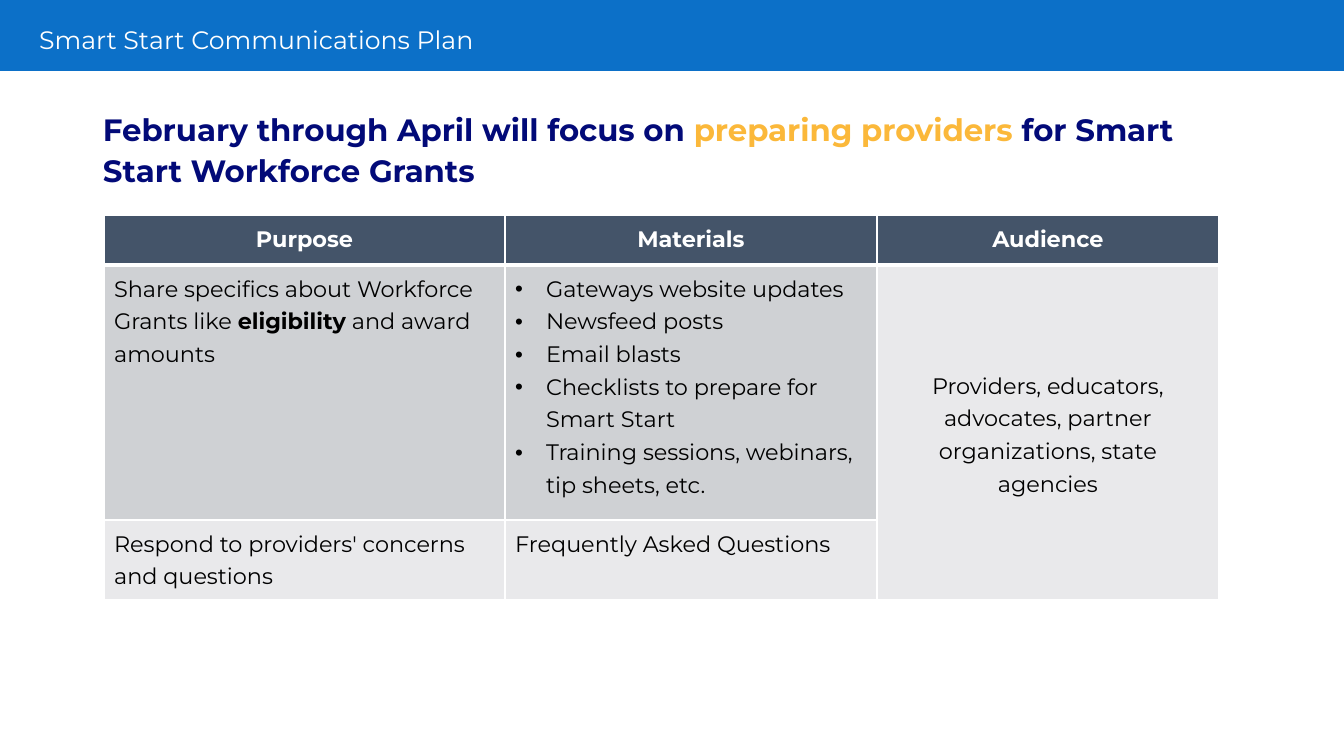
from lxml import etree
from pptx import Presentation
from pptx.dml.color import RGBColor
from pptx.enum.shapes import MSO_SHAPE
from pptx.enum.text import MSO_ANCHOR, MSO_AUTO_SIZE, PP_ALIGN
from pptx.oxml.ns import qn
from pptx.util import Emu, Pt

LEFT, CENTER = PP_ALIGN.LEFT, PP_ALIGN.CENTER
TOP, MIDDLE = MSO_ANCHOR.TOP, MSO_ANCHOR.MIDDLE
BLUE = RGBColor(0x0C, 0x70, 0xC8)
NAVY = RGBColor(0x02, 0x0A, 0x78)
GOLD = RGBColor(0xFB, 0xB8, 0x3A)
SLATE = RGBColor(0x44, 0x54, 0x69)
GREY = RGBColor(0xCF, 0xD1, 0xD4)
PALE = RGBColor(0xE9, 0xE9, 0xEB)
WHITE = RGBColor(0xFF, 0xFF, 0xFF)
BLACK = RGBColor(0, 0, 0)
PX = 914400 / 100.8


def px(count):
    return Emu(round(count * PX))


def write(frame, paragraphs, size=16, color=BLACK, bold=False, align=LEFT,
          spacing=1.2, bullet=False):
    """Fill a frame; each paragraph is a list of (text, format changes) spans."""
    for index, spans in enumerate(paragraphs):
        para = frame.paragraphs[0] if index == 0 else frame.add_paragraph()
        para.alignment = align
        para.line_spacing = spacing
        para.space_before = Pt(0)
        if bullet:
            properties = para._p.get_or_add_pPr()
            properties.set("marL", str(px(31)))
            properties.set("indent", str(-px(31)))
            etree.SubElement(properties, qn("a:buFont")).set("typeface", "Arial")
            etree.SubElement(properties, qn("a:buChar")).set("char", "•")
        for text, changes in spans:
            span = para.add_run()
            span.text = text
            span.font.name = "Montserrat"
            span.font.size = Pt(size)
            span.font.bold = changes.get("bold", bold)
            span.font.color.rgb = changes.get("color", color)


deck = Presentation()
deck.slide_width, deck.slide_height = px(1344), px(756)
page = deck.slides.add_slide(deck.slide_layouts[5])

# Title on its blue band
band = page.shapes.add_shape(MSO_SHAPE.RECTANGLE, 0, 0, px(1344), px(71))
band.shadow.inherit = False
band.fill.solid()
band.fill.fore_color.rgb = BLUE
band.line.fill.background()
page.shapes._spTree.insert(2, band._element)

title = page.shapes.title
title.left, title.top, title.width, title.height = px(29), px(22), px(761), px(38)
title.text_frame.auto_size = MSO_AUTO_SIZE.NONE
title.text_frame.vertical_anchor = MIDDLE
write(title.text_frame, [[("Smart Start Communications Plan", {})]],
      size=18, color=WHITE, spacing=0.9)

# Key message
message = page.shapes.add_textbox(px(93), px(102), px(1157), px(51))
message.text_frame.word_wrap = True
write(message.text_frame,
      [[("February through April will focus on ", {}),
        ("preparing providers ", {"color": GOLD}),
        ("for Smart Start Workforce Grants", {})]],
      size=22, color=NAVY, bold=True, spacing=1.1)

# Plan table
COLUMN_WIDTHS = [401, 372, 342]
ROW_HEIGHTS = [50, 255, 80]
plan = page.shapes.add_table(3, 3, px(104), px(215), px(sum(COLUMN_WIDTHS)),
                             px(sum(ROW_HEIGHTS))).table
for column, width in zip(plan.columns, COLUMN_WIDTHS):
    column.width = px(width)
for row, height in zip(plan.rows, ROW_HEIGHTS):
    row.height = px(height)

for row in range(3):
    for column in range(3):
        cell = plan.cell(row, column)
        properties = cell._tc.get_or_add_tcPr()
        for side in ("L", "R", "T", "B"):
            thick = (row, side) in ((0, "B"), (1, "T"))
            border = etree.SubElement(properties, qn(f"a:ln{side}"))
            border.set("w", str(Pt(3 if thick else 1)))
            fill = etree.SubElement(border, qn("a:solidFill"))
            etree.SubElement(fill, qn("a:srgbClr")).set("val", str(WHITE))
        cell.fill.solid()
        cell.fill.fore_color.rgb = PALE if row and column == 2 else (SLATE, GREY, PALE)[row]
        cell.vertical_anchor = TOP

for column, heading in enumerate(["Purpose", "Materials", "Audience"]):
    write(plan.cell(0, column).text_frame, [[(heading, {})]],
          color=WHITE, bold=True, align=CENTER)

write(plan.cell(1, 0).text_frame,
      [[("Share specifics about Workforce Grants like ", {}),
        ("eligibility", {"bold": True}),
        (" and award amounts", {})]])
materials = [
    "Gateways website updates",
    "Newsfeed posts",
    "Email blasts",
    "Checklists to prepare for Smart\u00a0Start",
    "Training sessions, webinars, tip\u00a0sheets,\u00a0etc.",
]
write(plan.cell(1, 1).text_frame, [[(item, {})] for item in materials], bullet=True)
write(plan.cell(2, 0).text_frame, [[("Respond to providers' concerns and questions", {})]])
write(plan.cell(2, 1).text_frame, [[("Frequently Asked Questions", {})]])

audience = plan.cell(1, 2)
audience.merge(plan.cell(2, 2))
audience.vertical_anchor = MIDDLE
write(audience.text_frame,
      [[("Providers, educators, advocates, partner organizations, state agencies", {})]],
      align=CENTER)

deck.save("out.pptx")
